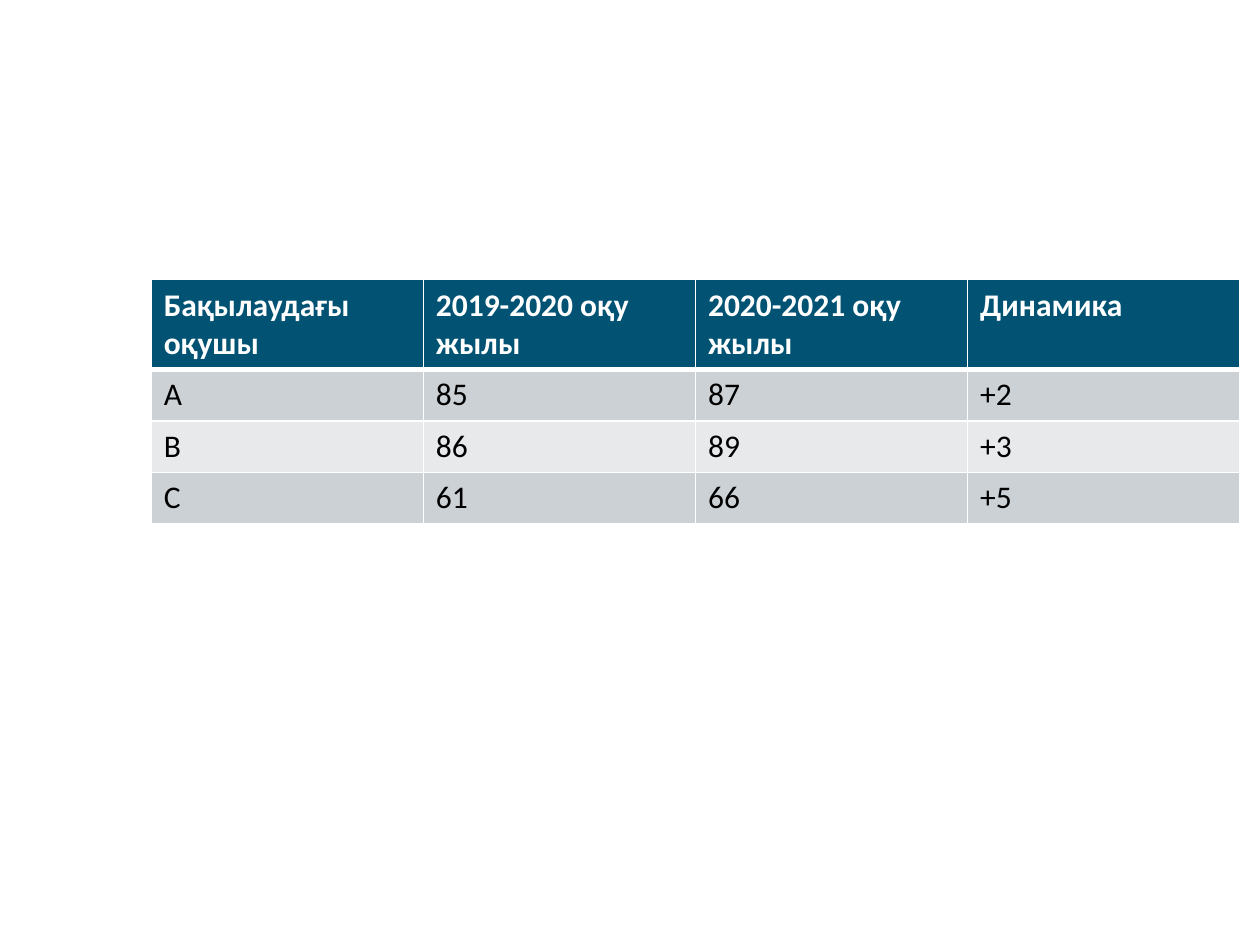
from typing import NamedTuple

from lxml.etree import SubElement
from pptx import Presentation
from pptx.dml.color import RGBColor
from pptx.oxml.ns import qn
from pptx.util import Inches, Pt

WHITE = "FFFFFF"
COLUMN_WIDTH, ROW_HEIGHT = 2.16, 0.41


class RowStyle(NamedTuple):
    fill: str
    color: str
    bold: bool
    top_border: float
    bottom_border: float


class ResultRow(NamedTuple):
    student: str
    first_year: str
    second_year: str
    dynamics: str


HEADER = RowStyle("025373", WHITE, True, 1, 3)
FIRST = RowStyle("CCD1D5", "000000", False, 3, 1)
EVEN = RowStyle("E7E9EB", "000000", False, 1, 1)
ODD = FIRST._replace(top_border=1)

RESULTS = [
    (HEADER, ResultRow("Бақылаудағы оқушы", "2019-2020 оқу жылы",
                       "2020-2021 оқу жылы", "Динамика")),
    (FIRST, ResultRow("А", "85", "87", "+2")),
    (EVEN, ResultRow("В", "86", "89", "+3")),
    (ODD, ResultRow("С", "61", "66", "+5")),
]


def rgb(value: str) -> RGBColor:
    return RGBColor.from_string(value)


def draw_borders(cell, style: RowStyle) -> None:
    properties = cell._tc.get_or_add_tcPr()
    widths = {"a:lnL": 1, "a:lnR": 1,
              "a:lnT": style.top_border, "a:lnB": style.bottom_border}
    for side, width in widths.items():
        line = SubElement(properties, qn(side), w=str(Pt(width)))
        solid = SubElement(line, qn("a:solidFill"))
        SubElement(solid, qn("a:srgbClr"), val=WHITE)


def fill_cell(cell, text: str, style: RowStyle) -> None:
    draw_borders(cell, style)
    cell.fill.solid()
    cell.fill.fore_color.rgb = rgb(style.fill)
    run = cell.text_frame.paragraphs[0].add_run()
    run.text = text
    text_format = {"name": "Calibri", "size": Pt(18), "bold": style.bold}
    for attribute, value in text_format.items():
        setattr(run.font, attribute, value)
    run.font.color.rgb = rgb(style.color)


def main() -> None:
    presentation = Presentation()
    presentation.slide_width, presentation.slide_height = Inches(10), Inches(7.5)
    slide = presentation.slides.add_slide(presentation.slide_layouts[6])

    # Results table: equal columns and rows
    column_count = len(ResultRow._fields)
    results = slide.shapes.add_table(
        len(RESULTS), column_count, Inches(1.2), Inches(2.22),
        Inches(COLUMN_WIDTH * column_count), Inches(ROW_HEIGHT * len(RESULTS)),
    ).table

    # Cell contents
    for row, (style, texts) in zip(results.rows, RESULTS):
        for cell, text in zip(row.cells, texts):
            fill_cell(cell, text, style)

    presentation.save("out.pptx")


if __name__ == "__main__":
    main()
